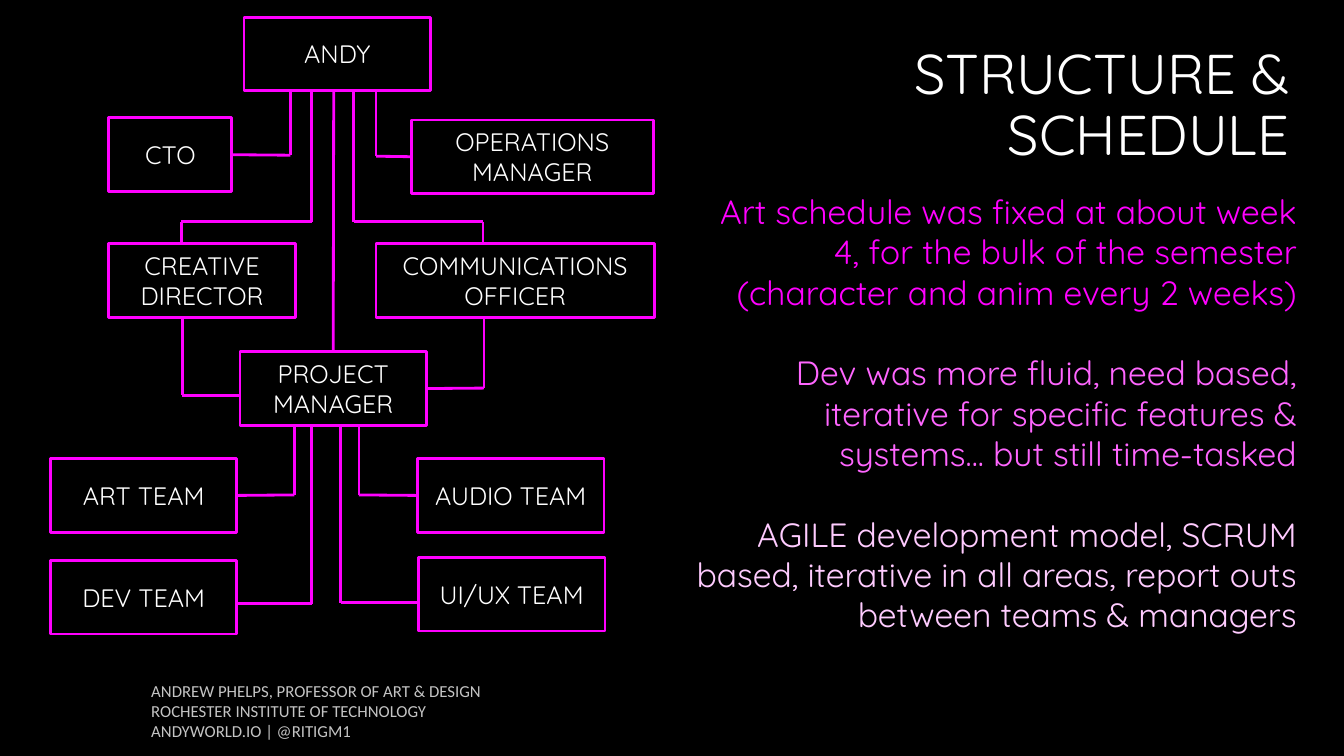
from itertools import pairwise

from lxml import etree
from pptx import Presentation
from pptx.dml.color import RGBColor
from pptx.enum import shapes, text
from pptx.oxml import ns
from pptx.util import Inches, Pt

COLORS = {
    "background": "000000",
    "white": "FFFFFF",
    "footer": "C4C4C4",
    "magenta": "FF00FF",
    "pink": "FF66FF",
    "pale": "FFCCFF",
}
FONT = "Quicksand"
BOX_HEIGHT = 0.73
TOP, LEFT, RIGHT = 0, 1, 3

ROLES = {
    "ANDY": (1.92, 0, 1.85),
    "CTO": (0.58, 1, 1.22),
    "OPERATIONS MANAGER": (3.58, 1.02, 2.4),
    "CREATIVE DIRECTOR": (0.58, 2.25, 1.85),
    "COMMUNICATIONS\nOFFICER": (3.23, 2.25, 2.76),
    "PROJECT MANAGER": (1.88, 3.32, 1.85),
    "ART TEAM": (0, 4.38, 1.85),
    "AUDIO TEAM": (3.64, 4.38, 1.85),
    "DEV TEAM": (0, 5.39, 1.85),
    "UI/UX TEAM": (3.65, 5.36, 1.85),
}

JOINED_ROUTES = [
    ([(2.38, 0.73), (2.38, 1.37), (1.8, 1.37)], "CTO", RIGHT),
    ([(3.23, 0.73), (3.23, 1.38), (3.58, 1.38)], "OPERATIONS MANAGER", LEFT),
    ([(2.81, 0.73), (2.81, 3.32)], "PROJECT MANAGER", TOP),
    ([(4.3, 2.98), (4.3, 3.68), (3.73, 3.68)], "PROJECT MANAGER", RIGHT),
    ([(2.42, 4.05), (2.42, 4.74), (1.85, 4.74)], "ART TEAM", RIGHT),
    ([(3.06, 4.05), (3.06, 4.74), (3.64, 4.74)], "AUDIO TEAM", LEFT),
]
FREE_ROUTES = [
    [(2.59, 0.73), (2.59, 2.03), (1.3, 2.03), (1.3, 2.25)],
    [(3.01, 0.73), (3.01, 2.03), (4.29, 2.03), (4.29, 2.25)],
    [(1.31, 2.98), (1.31, 3.75), (1.88, 3.75)],
    [(2.59, 4.05), (2.59, 5.82), (1.85, 5.82)],
    [(2.88, 4.05), (2.88, 5.81), (3.65, 5.81)],
]

POINTS = [
    ("Art schedule was fixed at about week 4, for the bulk of the semester "
     "(character and anim every 2 weeks)", "magenta"),
    ("Dev was more fluid, need based, iterative for specific features & "
     "systems... but still time-tasked", "pink"),
    ("AGILE development model, SCRUM based, iterative in all areas, "
     "report outs between teams & managers", "pale"),
]


def color(name):
    return RGBColor.from_string(COLORS[name])


def style(paragraph, size, color_name, alignment, font=FONT):
    paragraph.alignment = alignment
    paragraph.font.name = font
    paragraph.font.size = Pt(size)
    paragraph.font.color.rgb = color(color_name)


def place(shape, box):
    shape.left, shape.top, shape.width, shape.height = map(Inches, box)


def add_title(slide, box):
    title = slide.shapes.title
    place(title, box)
    frame = title.text_frame
    frame.text = "STRUCTURE & SCHEDULE"
    frame.auto_size = text.MSO_AUTO_SIZE.NONE
    frame.vertical_anchor = text.MSO_ANCHOR.TOP
    paragraph = frame.paragraphs[0]
    paragraph.line_spacing = 0.9
    style(paragraph, 40, "white", text.PP_ALIGN.RIGHT)


def add_points(slide, box):
    body = slide.placeholders[1]
    place(body, box)
    frame = body.text_frame
    frame.text = "\n".join(words for words, _ in POINTS)
    frame.auto_size = text.MSO_AUTO_SIZE.NONE
    frame.vertical_anchor = text.MSO_ANCHOR.MIDDLE
    for index, (paragraph, (_, tint)) in enumerate(zip(frame.paragraphs, POINTS)):
        properties = paragraph._p.get_or_add_pPr()
        properties.set("marL", "0")
        properties.set("indent", "0")
        etree.SubElement(properties, ns.qn("a:buNone"))
        paragraph.space_before = Pt(28.8 if index else 0)
        style(paragraph, 24, tint, text.PP_ALIGN.RIGHT)


def add_role(slide, words, box):
    role = slide.shapes.add_shape(shapes.MSO_SHAPE.RECTANGLE, *map(Inches, box))
    role.shadow.inherit = False
    role.fill.background()
    role.line.color.rgb = color("magenta")
    role.line.width = Pt(2)
    frame = role.text_frame
    frame.text = words
    frame.word_wrap = True
    frame.vertical_anchor = text.MSO_ANCHOR.MIDDLE
    for paragraph in frame.paragraphs:
        style(paragraph, 18, "white", text.PP_ALIGN.CENTER)
    return role


def add_route(slide, points, origin):
    left, top = origin
    placed = [(Inches(left + x), Inches(top + y)) for x, y in points]
    for start, end in pairwise(placed):
        line = slide.shapes.add_connector(shapes.MSO_CONNECTOR.STRAIGHT, *start, *end)
        line.line.color.rgb = color("magenta")
        line.line.width = Pt(2)
        etree.SubElement(line._element.spPr, ns.qn("a:effectLst"))
    return line


def add_organization(slide, origin):
    left, top = origin
    roles = {
        words: add_role(slide, words, (left + x, top + y, width, BOX_HEIGHT))
        for words, (x, y, width) in ROLES.items()
    }
    for points, role, side in JOINED_ROUTES:
        add_route(slide, points, origin).end_connect(roles[role], side)
    for points in FREE_ROUTES:
        add_route(slide, points, origin)


def add_footer(slide, box):
    frame = slide.shapes.add_textbox(*map(Inches, box)).text_frame
    frame.word_wrap = True
    frame.margin_left = frame.margin_top = frame.margin_right = frame.margin_bottom = 0
    frame.text = (
        "ANDREW PHELPS, PROFESSOR OF ART & DESIGN\n"
        "ROCHESTER INSTITUTE OF TECHNOLOGY\n"
        "ANDYWORLD.IO | @RITIGM1"
    )
    for paragraph in frame.paragraphs:
        style(paragraph, 12, "footer", text.PP_ALIGN.LEFT, "Calibri")


def main():
    presentation = Presentation()
    presentation.slide_width = Inches(13.33)
    presentation.slide_height = Inches(7.5)
    slide = presentation.slides.add_slide(presentation.slide_layouts[1])
    slide.background.fill.solid()
    slide.background.fill.fore_color.rgb = color("background")
    add_footer(slide, (1.5, 6.75, 7.25, 0.5))
    add_title(slide, (6.74, 0.41, 6.15, 1.45))
    add_points(slide, (6.72, 1.5, 6.24, 5.19))
    add_organization(slide, (0.5, 0.17))
    presentation.save("out.pptx")


if __name__ == "__main__":
    main()
